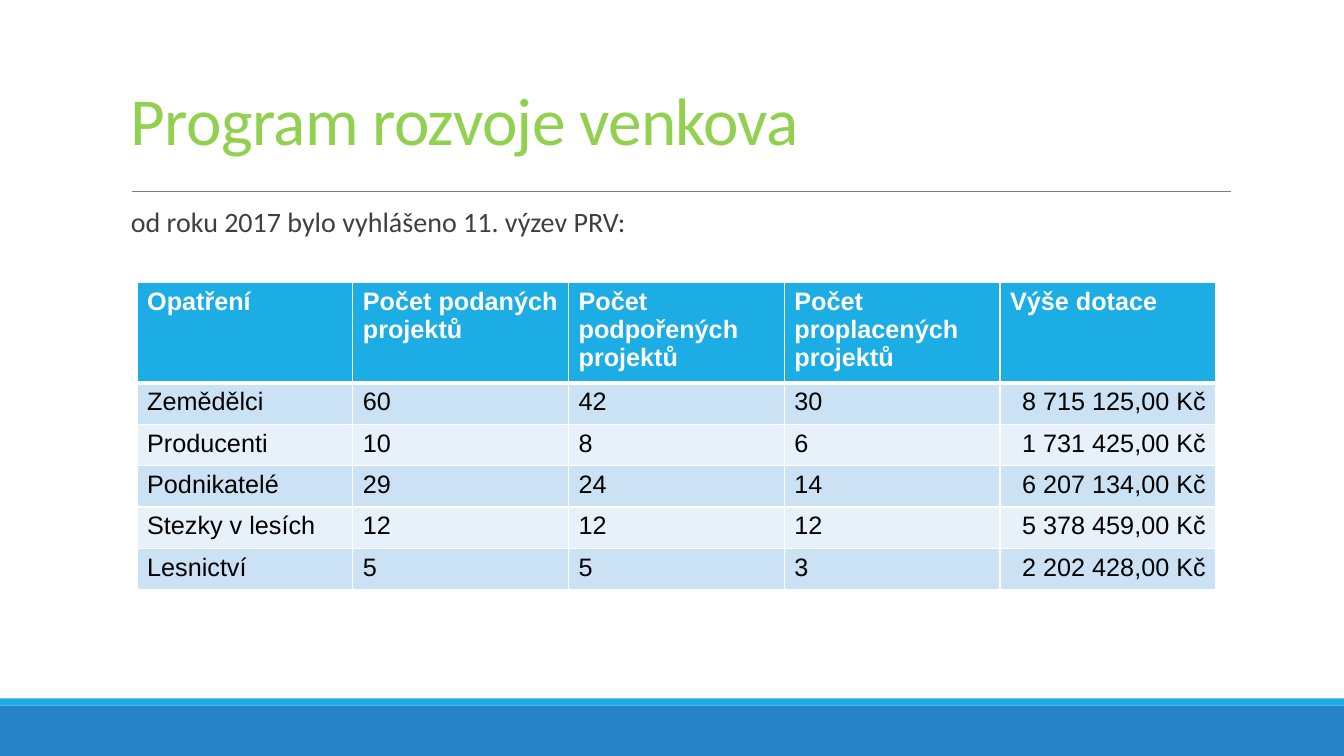
"""Build a slide with a table of rural development grants."""
from lxml import etree
from pptx import Presentation
from pptx.dml.color import RGBColor
from pptx.enum.shapes import MSO_CONNECTOR, MSO_SHAPE
from pptx.enum.text import MSO_ANCHOR, PP_ALIGN
from pptx.oxml.ns import qn
from pptx.util import Inches, Pt

RECT, STRAIGHT = MSO_SHAPE.RECTANGLE, MSO_CONNECTOR.STRAIGHT
TOP, BOTTOM = MSO_ANCHOR.TOP, MSO_ANCHOR.BOTTOM
LEFT, RIGHT = PP_ALIGN.LEFT, PP_ALIGN.RIGHT
BLUE, WHITE = "1CADE4", "FFFFFF"
BANDS = ["CBE2F5", "E7F1FA"]
COL_W, ROW_H, HEADER_H = 2.14, 0.41, 0.92

ROWS = [
    ["Opatření", "Počet podaných projektů", "Počet podpořených projektů",
     "Počet proplacených projektů", "Výše dotace"],
    ["Zemědělci", "60", "42", "30", "8 715 125,00 Kč"],
    ["Producenti", "10", "8", "6", "1 731 425,00 Kč"],
    ["Podnikatelé", "29", "24", "14", "6 207 134,00 Kč"],
    ["Stezky v lesích", "12", "12", "12", "5 378 459,00 Kč"],
    ["Lesnictví", "5", "5", "3", "2 202 428,00 Kč"],
]


def rgb(color):
    return RGBColor.from_string(color)


def write(tf, text, size=18, font="Arial", color="000000", bold=False,
          align=LEFT, spacing=1.0, tracking=0):
    p = tf.paragraphs[0]
    p.alignment, p.line_spacing = align, spacing
    r = p.add_run()
    r.text = text
    r.font.size, r.font.name, r.font.bold = Pt(size), font, bold
    r.font.color.rgb = rgb(color)
    if tracking:
        r.font._element.set("spc", str(tracking))


prs = Presentation()
prs.slide_width, prs.slide_height = Inches(13.33), Inches(7.5)
s = prs.slides.add_slide(prs.slide_layouts[6])

for top, height, color in [(7, 0.5, "2683C6"), (6.93, 0.07, BLUE)]:
    sp = s.shapes.add_shape(RECT, 0, Inches(top), prs.slide_width, Inches(height))
    sp.shadow.inherit = False
    sp.fill.solid()
    sp.fill.fore_color.rgb = rgb(color)
    sp.line.fill.background()

rule = s.shapes.add_connector(STRAIGHT, Inches(1.31), Inches(1.9), Inches(12.21), Inches(1.9))
rule.line.color.rgb = rgb("7F7F7F")
rule.line.width = Pt(0.75)
etree.SubElement(rule._element.spPr, qn("a:effectLst"))

for top, height, anchor, text, style in [
    (0.31, 1.32, BOTTOM, "Program rozvoje venkova",
     dict(size=48, color="92D050", spacing=0.85, tracking=-50)),
    (2.02, 4.4, TOP, "od roku 2017 bylo vyhlášeno 11. výzev PRV:",
     dict(size=20, color="3F3F3F", spacing=0.9)),
]:
    tf = s.shapes.add_textbox(Inches(1.2), Inches(top), Inches(11), Inches(height)).text_frame
    tf.word_wrap = True
    tf.vertical_anchor = anchor
    write(tf, text, font="Calibri", **style)

table = s.shapes.add_table(
    len(ROWS), len(ROWS[0]), Inches(1.36), Inches(2.8),
    Inches(COL_W * len(ROWS[0])), Inches(HEADER_H + ROW_H * (len(ROWS) - 1))).table
for column in table.columns:
    column.width = Inches(COL_W)

for i, row in enumerate(ROWS):
    header = i == 0
    table.rows[i].height = Inches(HEADER_H if header else ROW_H)
    for j, text in enumerate(row):
        cell = table.cell(i, j)
        align = RIGHT if j == len(row) - 1 and not header else LEFT
        write(cell.text_frame, text, color=WHITE if header else "000000",
              bold=header, align=align)
        tcPr = cell._tc.get_or_add_tcPr()
        for side in ["lnL", "lnR", "lnT", "lnB"]:
            thick = (i, side) in [(0, "lnB"), (1, "lnT")]
            ln = etree.SubElement(tcPr, qn("a:" + side), w=str(Pt(3 if thick else 1)))
            solid = etree.SubElement(ln, qn("a:solidFill"))
            etree.SubElement(solid, qn("a:srgbClr"), val=WHITE)
        cell.fill.solid()
        cell.fill.fore_color.rgb = rgb(BLUE if header else BANDS[(i - 1) % 2])

prs.save("out.pptx")
